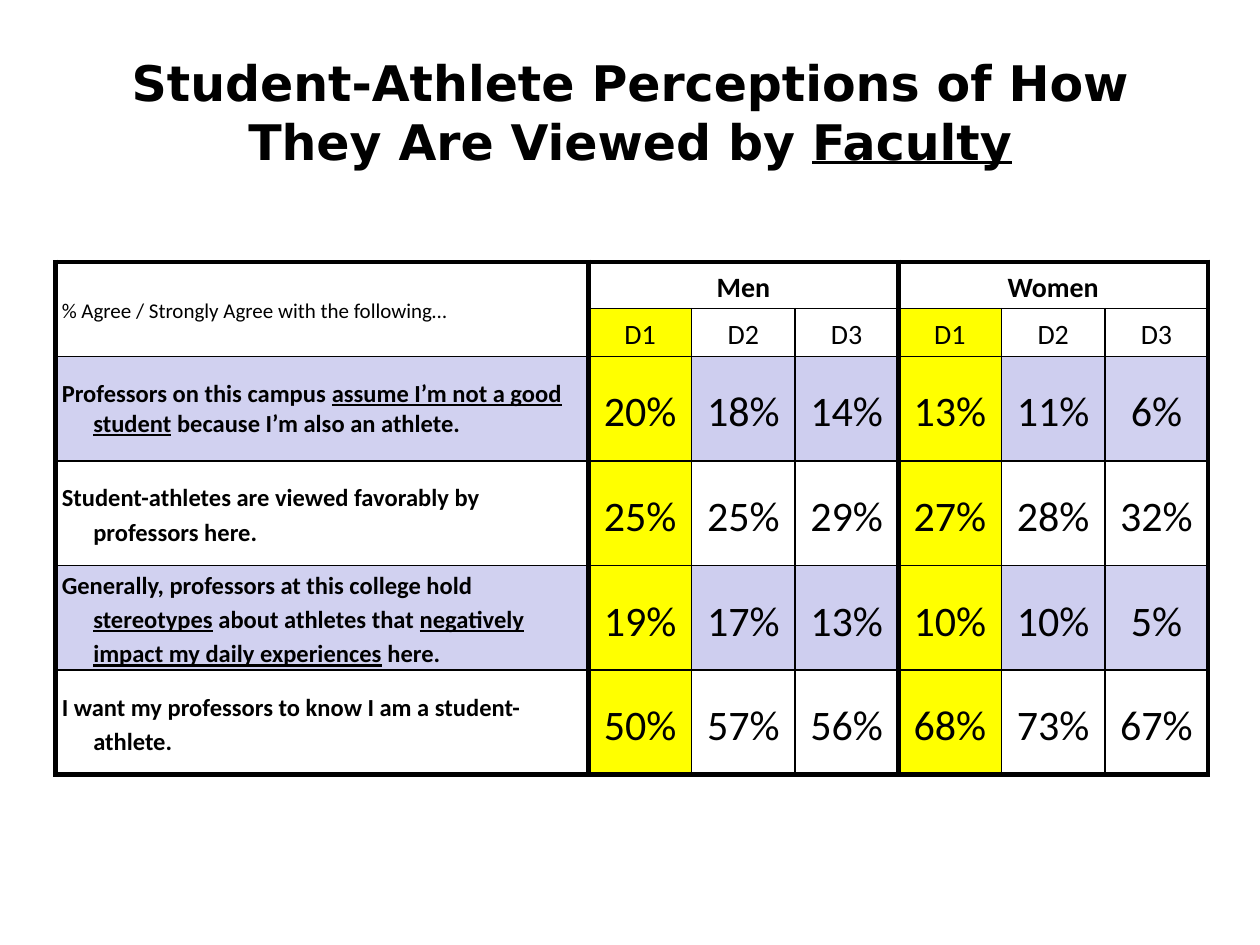
import pptx
import pptx.util
import pptx.dml.color
import pptx.enum.text
import lxml.etree

Inches, Pt = pptx.util.Inches, pptx.util.Pt
ALIGN = pptx.enum.text.PP_ALIGN
MIDDLE = pptx.enum.text.MSO_ANCHOR.MIDDLE
BLACK, YELLOW, LILAC, PALE = "000000", "FFFF00", "CECEEF", "D1D1F0"
THICK, THIN = 3, 1
WIDTHS = [4.23] + [0.82] * 6
HEIGHTS = [0.37, 0.38] + [0.83] * 4
GROUPS = {1: "Men", 4: "Women"}
TITLE = [("Student-Athlete Perceptions of How They Are Viewed by ", False),
         ("Faculty", True)]
ITEMS = [
    ([("Professors on this campus ", False),
      ("assume I’m not a good student", True),
      (" because I’m also an athlete.", False)],
     [20, 18, 14, 13, 11, 6]),
    ([("Student-athletes are viewed favorably by professors here.", False)],
     [25, 25, 29, 27, 28, 32]),
    ([("Generally, professors at this college hold ", False),
      ("stereotypes", True),
      (" about athletes that ", False),
      ("negatively impact my daily experiences", True),
      (" here.", False)],
     [19, 17, 13, 10, 10, 5]),
    ([("I want my professors to know I am a student-athlete.", False)],
     [50, 57, 56, 68, 73, 67]),
]


def color(code):
    """Turn a hex string into a colour."""
    return pptx.dml.color.RGBColor.from_string(code)


def write(para, runs, size, bold=False, face="Calibri"):
    """Add (text, underlined) runs to a paragraph."""
    for text, under in runs:
        run = para.add_run()
        run.text = text
        font = run.font
        font.name, font.size, font.bold = face, Pt(size), bold
        font.color.rgb = color(BLACK)
        if under:
            font.underline = True


def border(cell, sides):
    """Draw the four edges of a cell from widths in points."""
    props = cell._tc.get_or_add_tcPr()
    for side in "LRTB":
        line = lxml.etree.SubElement(props, pptx.oxml.ns.qn("a:ln" + side),
                                     w=str(Pt(sides[side])))
        fill = lxml.etree.SubElement(line, pptx.oxml.ns.qn("a:solidFill"))
        lxml.etree.SubElement(fill, pptx.oxml.ns.qn("a:srgbClr"), val=BLACK)


def shade(row, col):
    """Give the fill of a cell, or None."""
    if row > 0 and col in GROUPS:
        return YELLOW
    if row in (2, 4):
        return PALE if col in (0, 6) else LILAC
    return None


def style(table):
    """Set the edges, fill and margins of every cell."""
    last = len(HEIGHTS) - 1
    for row in range(len(HEIGHTS)):
        for col in range(len(WIDTHS)):
            cell = table.cell(row, col)
            end = col + cell.span_width - 1 if cell.is_merge_origin else col
            border(cell, {
                "L": THICK if col == 0 or col in GROUPS else THIN,
                "R": THICK if end in (0, 3, 6) else THIN,
                "T": THICK if row == 0 else THIN,
                "B": THICK if row == last else THIN,
            })
            code = shade(row, col)
            if code:
                cell.fill.solid()
                cell.fill.fore_color.rgb = color(code)
            else:
                cell.fill.background()
            cell.margin_left = cell.margin_right = Inches(0.05)
            cell.margin_top = cell.margin_bottom = 0
            cell.vertical_anchor = MIDDLE


def put(cell, runs, size, bold=False, align=ALIGN.CENTER, space=1.15, hang=0):
    """Write one paragraph in a cell."""
    para = cell.text_frame.paragraphs[0]
    para.alignment, para.line_spacing = align, space
    if hang:
        props = para._p.get_or_add_pPr()
        props.set("marL", str(Inches(hang)))
        props.set("indent", str(-Inches(hang)))
    write(para, runs, size, bold)


def add_title(slide, left, top, width, height):
    """Place and write the slide title."""
    title = slide.shapes.title
    title.left, title.top = Inches(left), Inches(top)
    title.width, title.height = Inches(width), Inches(height)
    frame = title.text_frame
    frame.word_wrap = True
    frame.auto_size = pptx.enum.text.MSO_AUTO_SIZE.NONE
    frame.vertical_anchor = MIDDLE
    para = frame.paragraphs[0]
    para.alignment = ALIGN.CENTER
    write(para, TITLE, 28, True, "DejaVu Sans")


def add_survey(slide, left, top):
    """Build the survey table."""
    table = slide.shapes.add_table(
        len(HEIGHTS), len(WIDTHS), Inches(left), Inches(top),
        Inches(sum(WIDTHS)), Inches(sum(HEIGHTS))).table
    table.first_row = table.horz_banding = False
    for col, width in zip(table.columns, WIDTHS):
        col.width = Inches(width)
    for row, height in zip(table.rows, HEIGHTS):
        row.height = Inches(height)
    table.cell(0, 0).merge(table.cell(1, 0))
    for col in GROUPS:
        table.cell(0, col).merge(table.cell(0, col + 2))
    style(table)

    put(table.cell(0, 0),
        [("% Agree / Strongly Agree with the following…", False)],
        12, align=ALIGN.LEFT)
    for start, name in GROUPS.items():
        put(table.cell(0, start), [(name, False)], 16, True)
        for step in range(3):
            put(table.cell(1, start + step), [(f"D{step + 1}", False)], 16)
    for row, (runs, values) in enumerate(ITEMS, 2):
        put(table.cell(row, 0), runs, 14, True, ALIGN.LEFT,
            1.0 if row == 2 else 1.15, 0.25)
        for col, value in enumerate(values, 1):
            put(table.cell(row, col), [(f"{value}%", False)], 24)


def main():
    """Build and save the slide."""
    deck = pptx.Presentation()
    deck.slide_width, deck.slide_height = Inches(10), Inches(7.5)
    slide = deck.slides.add_slide(deck.slide_layouts[5])
    add_title(slide, 0.75, 0.44, 8.5, 0.89)
    add_survey(slide, 0.44, 2.08)
    deck.save("out.pptx")


if __name__ == "__main__":
    main()
